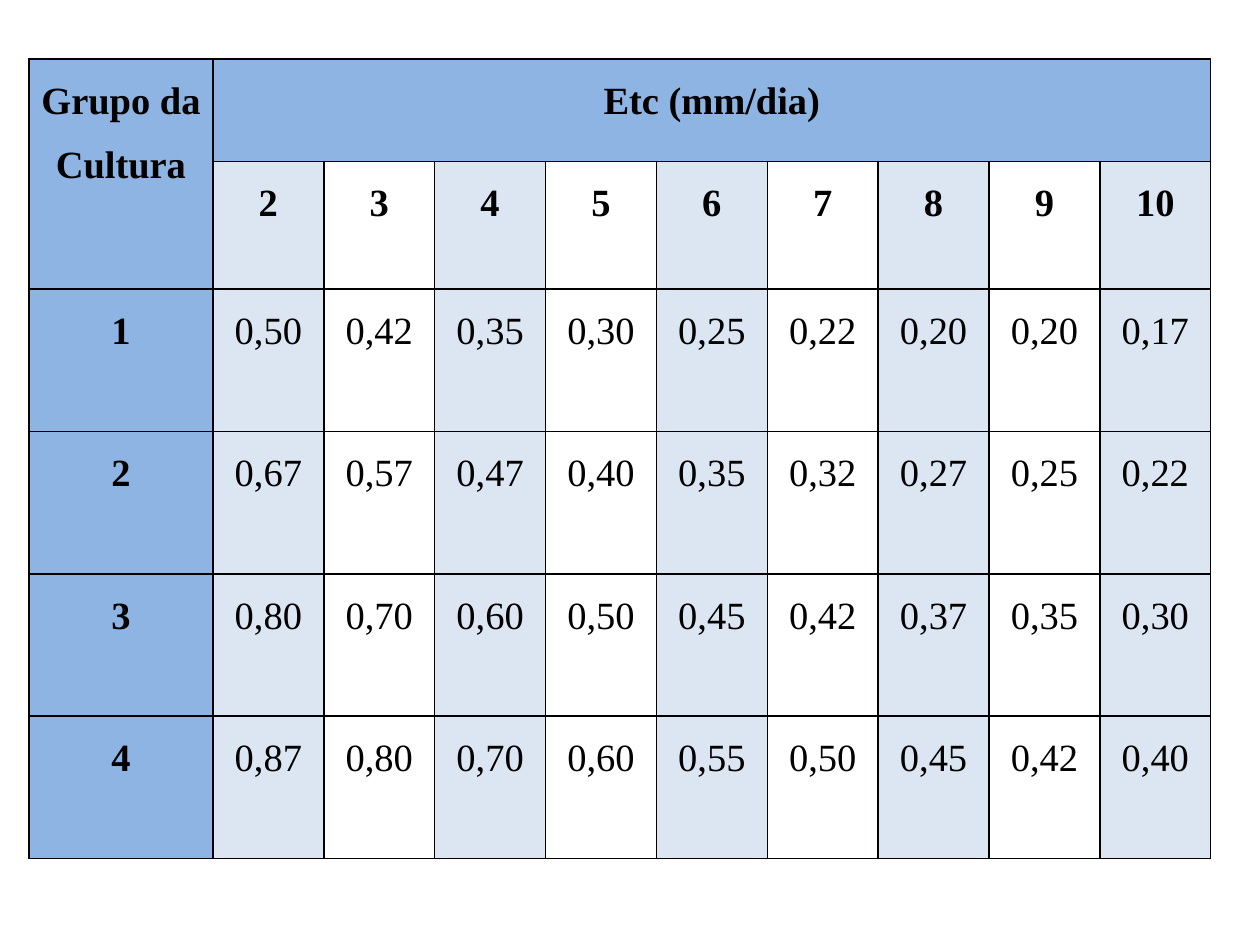
import pptx
import pptx.dml.color
import pptx.enum.text
import pptx.oxml
import pptx.oxml.ns
import pptx.util

Inches = pptx.util.Inches
Pt = pptx.util.Pt
RGBColor = pptx.dml.color.RGBColor

BLACK = RGBColor(0x00, 0x00, 0x00)
HEADER_BLUE = RGBColor(0x8E, 0xB4, 0xE3)
BAND_BLUE = RGBColor(0xDC, 0xE6, 0xF2)

FONT = "Times New Roman"
ETC_VALUES = [str(n) for n in range(2, 11)]
FACTORS = {
    "1": "0,50 0,42 0,35 0,30 0,25 0,22 0,20 0,20 0,17",
    "2": "0,67 0,57 0,47 0,40 0,35 0,32 0,27 0,25 0,22",
    "3": "0,80 0,70 0,60 0,50 0,45 0,42 0,37 0,35 0,30",
    "4": "0,87 0,80 0,70 0,60 0,55 0,50 0,45 0,42 0,40",
}
GROUP_WIDTH = 1.46
ROW_HEIGHTS = [0.81, 1.01] + [1.13] * len(FACTORS)


def set_borders(cell):
    """Put a thin black line on all four sides, ahead of the cell's fill."""
    tc_pr = cell._tc.get_or_add_tcPr()
    for i, side in enumerate(("lnL", "lnR", "lnT", "lnB")):
        tc_pr.insert(i, pptx.oxml.parse_xml(
            f'<a:{side} {pptx.oxml.ns.nsdecls("a")} w="{Pt(1)}">'
            f'<a:solidFill><a:srgbClr val="{BLACK}"/></a:solidFill></a:{side}>'))


def style_cell(cell, fill):
    cell.margin_left = cell.margin_right = Inches(0.05)
    cell.margin_top = cell.margin_bottom = 0
    if fill is None:
        cell.fill.background()
    else:
        cell.fill.solid()
        cell.fill.fore_color.rgb = fill
    set_borders(cell)


def write_cell(cell, text, bold):
    p = cell.text_frame.paragraphs[0]
    p.alignment = pptx.enum.text.PP_ALIGN.CENTER
    p.line_spacing = 1.5
    r = p.add_run()
    r.text = text
    r.font.name = FONT
    r.font.size = Pt(22)
    r.font.bold = bold
    r.font.color.rgb = BLACK


def add_factor_table(slide, left, top, width, height):
    rows = [["Grupo da Cultura", "Etc (mm/dia)"], [None] + ETC_VALUES]
    rows += [[group] + values.split() for group, values in FACTORS.items()]
    n_cols = len(ETC_VALUES) + 1

    frame = slide.shapes.add_table(len(rows), n_cols, Inches(left), Inches(top),
                                   Inches(width), Inches(height))
    table = frame.table
    table.first_row = table.horz_banding = False

    # Column and row sizes
    value_width = (width - GROUP_WIDTH) / len(ETC_VALUES)
    for i, column in enumerate(table.columns):
        column.width = Inches(value_width if i else GROUP_WIDTH)
    for row, row_height in zip(table.rows, ROW_HEIGHTS):
        row.height = Inches(row_height)

    # Blue headers, then alternating column bands
    for r in range(len(rows)):
        for c in range(n_cols):
            if r == 0 or c == 0:
                fill = HEADER_BLUE
            else:
                fill = BAND_BLUE if c % 2 else None
            style_cell(table.cell(r, c), fill)

    # Merged headers
    table.cell(0, 0).merge(table.cell(1, 0))
    table.cell(0, 1).merge(table.cell(0, n_cols - 1))

    # Wording
    for r, texts in enumerate(rows):
        for c, text in enumerate(texts):
            if text is not None:
                write_cell(table.cell(r, c), text, bold=r < 2 or c == 0)


def main():
    prs = pptx.Presentation()
    prs.slide_width = Inches(10)
    prs.slide_height = Inches(7.5)
    s = prs.slides.add_slide(prs.slide_layouts[6])
    add_factor_table(s, 0.23, 0.47, 9.38, sum(ROW_HEIGHTS))
    prs.save("out.pptx")


if __name__ == "__main__":
    main()
